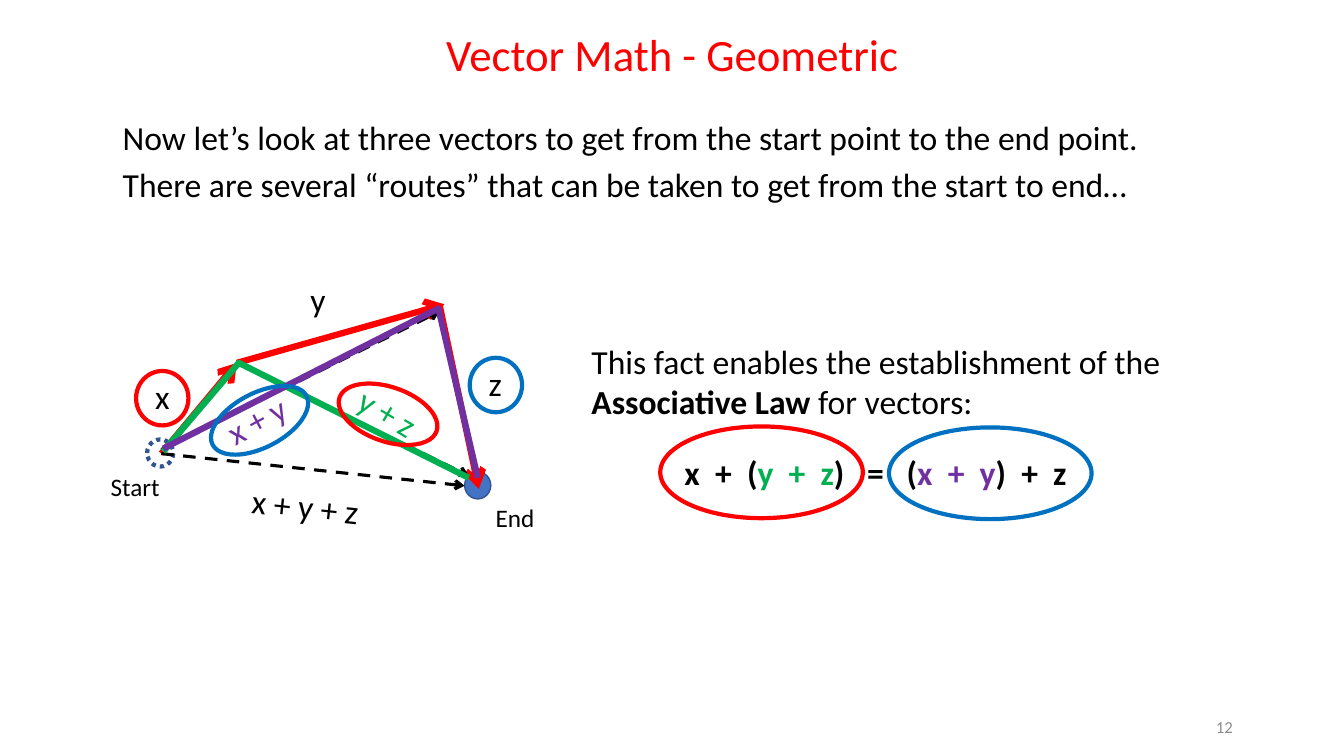
from lxml import etree
from pptx import Presentation
from pptx import util as u
from pptx.dml.color import RGBColor
from pptx.enum import dml, shapes, text
from pptx.oxml.ns import qn

BLACK, RED, GREEN, PURPLE = "000000", "FF0000", "00B050", "7030A0"
BLUE, POINT_FILL, POINT_LINE, GREY = "0070C0", "4472C4", "325491", "8C8C8C"


def rgb(value):
    return RGBColor.from_string(value)


class SlideBuilder:
    """Holds the text style and the slide being drawn."""

    font = "Calibri"

    def __init__(self, page):
        self.page = page

    def outline(self, shape, color, width, dash=None):
        shape.line.color.rgb = rgb(color)
        shape.line.width = u.Pt(width)
        if dash:
            shape.line.dash_style = dash

    def label(self, area, spans, size=24, align="LEFT", anchor="TOP", rotation=0):
        """Adds one paragraph; spans are (wording, color, bold) tuples."""
        box = self.page.shapes.add_textbox(*map(u.Pt, area))
        box.rotation = rotation
        frame = box.text_frame
        frame_format = {"word_wrap": True, "vertical_anchor": text.MSO_ANCHOR[anchor]}
        for name, value in frame_format.items():
            setattr(frame, name, value)
        para = frame.paragraphs[0]
        para.alignment = text.PP_ALIGN[align]
        for wording, color, bold in spans:
            span = para.add_run()
            span.text = wording
            span_format = {"name": self.font, "size": u.Pt(size), "bold": bold}
            for name, value in span_format.items():
                setattr(span.font, name, value)
            span.font.color.rgb = rgb(color)

    def ellipse(self, area, color, width=3, fill=None, dash=None, rotation=0):
        oval = self.page.shapes.add_shape(shapes.MSO_SHAPE.OVAL, *map(u.Pt, area))
        oval.shadow.inherit = False
        oval.rotation = rotation
        if fill:
            oval.fill.solid()
            oval.fill.fore_color.rgb = rgb(fill)
        else:
            oval.fill.background()
        self.outline(oval, color, width, dash)

    def arrow(self, ends, color, width, dash=None):
        line = self.page.shapes.add_connector(
            shapes.MSO_CONNECTOR.STRAIGHT, *map(u.Pt, ends))
        self.outline(line, color, width, dash)
        properties = line.line._get_or_add_ln()
        etree.SubElement(properties, qn("a:tailEnd"), type="arrow")
        etree.SubElement(properties.getparent(), qn("a:effectLst"))

    def route(self, points, color):
        """Draws an open path through the points."""
        start, *rest = [tuple(map(u.Pt, point)) for point in points]
        builder = self.page.shapes.build_freeform(*start)
        builder.add_line_segments(rest, close=False)
        path = builder.convert_to_shape()
        path.shadow.inherit = False
        path.fill.background()
        self.outline(path, color, 4.5)


def main():
    deck = Presentation()
    deck.slide_width, deck.slide_height = u.Pt(960), u.Pt(540)
    slide = SlideBuilder(deck.slides.add_slide(deck.slide_layouts[6]))

    # Vectors between the start and end points
    slide.ellipse((331.9, 337, 18.7, 19.4), POINT_LINE, 1, fill=POINT_FILL)
    for ends in [(115.2, 324, 169.2, 259.2), (169.2, 259.2, 317.5, 217.4),
                 (313.9, 217.4, 342, 349.2)]:
        slide.arrow(ends, RED, 4.5)
    for name, left, top in [("x", 103.7, 265), ("y", 214.6, 195.8), ("z", 342, 255.6)]:
        slide.label((left, top, 29.5, 36), [(name, BLACK, False)])
    slide.ellipse((105.1, 313.9, 18.7, 19.4), POINT_LINE,
                  dash=dml.MSO_LINE.ROUND_DOT)
    for name, left, top in [("Start", 72, 333.4), ("End", 347, 355)]:
        slide.label((left, top, 50.4, 28.8), [(name, BLACK, False)], size=18)

    # Sums of vectors
    for ends in [(115.2, 324, 331.9, 347), (115.2, 321.1, 313.9, 222.5),
                 (175.7, 262.1, 334.8, 339.8)]:
        slide.arrow(ends, BLACK, 2.25, dml.MSO_LINE.DASH)
    for wording, left, top, width, color, rotation in [
            ("x + y + z", 172.8, 344.9, 115.2, BLACK, 6),
            ("x + y", 153.4, 280.1, 66.2, PURPLE, 331.8),
            ("y + z", 247.7, 279.4, 68.4, GREEN, 31)]:
        slide.label((left, top, width, 36), [(wording, color, False)], rotation=rotation)

    # Introduction and associative law
    for wording, top in [
            ("Now let’s look at three vectors to get from the start point to the end point.", 79.9),
            ("There are several “routes” that can be taken to get from the start to end…", 113.8)]:
        slide.label((80.6, top, 822, 36), [(wording, BLACK, False)])
    slide.label((455.8, 319, 339.1, 36), [
        ("x  +  (", BLACK, True), ("y  +  z", GREEN, True), (")   =   (", BLACK, True),
        ("x  +  y", PURPLE, True), (")  +  z", BLACK, True)], align="CENTER")
    slide.label((415.4, 239.8, 441.4, 65.5), [
        ("This fact enables the establishment of the ", BLACK, False),
        ("Associative Law", BLACK, True), (" for vectors:", BLACK, False)])

    slide.route([(116.6, 322.6), (170.6, 259.2), (334.8, 341.3)], GREEN)
    slide.route([(116.6, 320.4), (313.2, 220.3), (341.3, 341.3)], PURPLE)

    slide.label((268.6, 15.8, 423.4, 46.1),
                [("Vector Math - Geometric", RED, False)], size=32, align="CENTER")
    slide.label((671.8, 504.7, 216, 28.8), [("12", GREY, False)],
                size=12, align="RIGHT", anchor="MIDDLE")

    # Rings pairing each route with its side of the law
    for color, single, pair, rotation, law in [
            (RED, (97.2, 265), (240.5, 276.5, 73.4, 38.9), 19.1, (471.6, 304.6)),
            (BLUE, (335.5, 255.6), (147.6, 280.8, 75.6, 38.9), 332.5, (635, 305.3))]:
        slide.ellipse((*single, 37.4, 38.9), color)
        slide.ellipse(pair, color, rotation=rotation)
        slide.ellipse((*law, 144.7, 65.5), color)

    deck.save("out.pptx")


if __name__ == "__main__":
    main()
